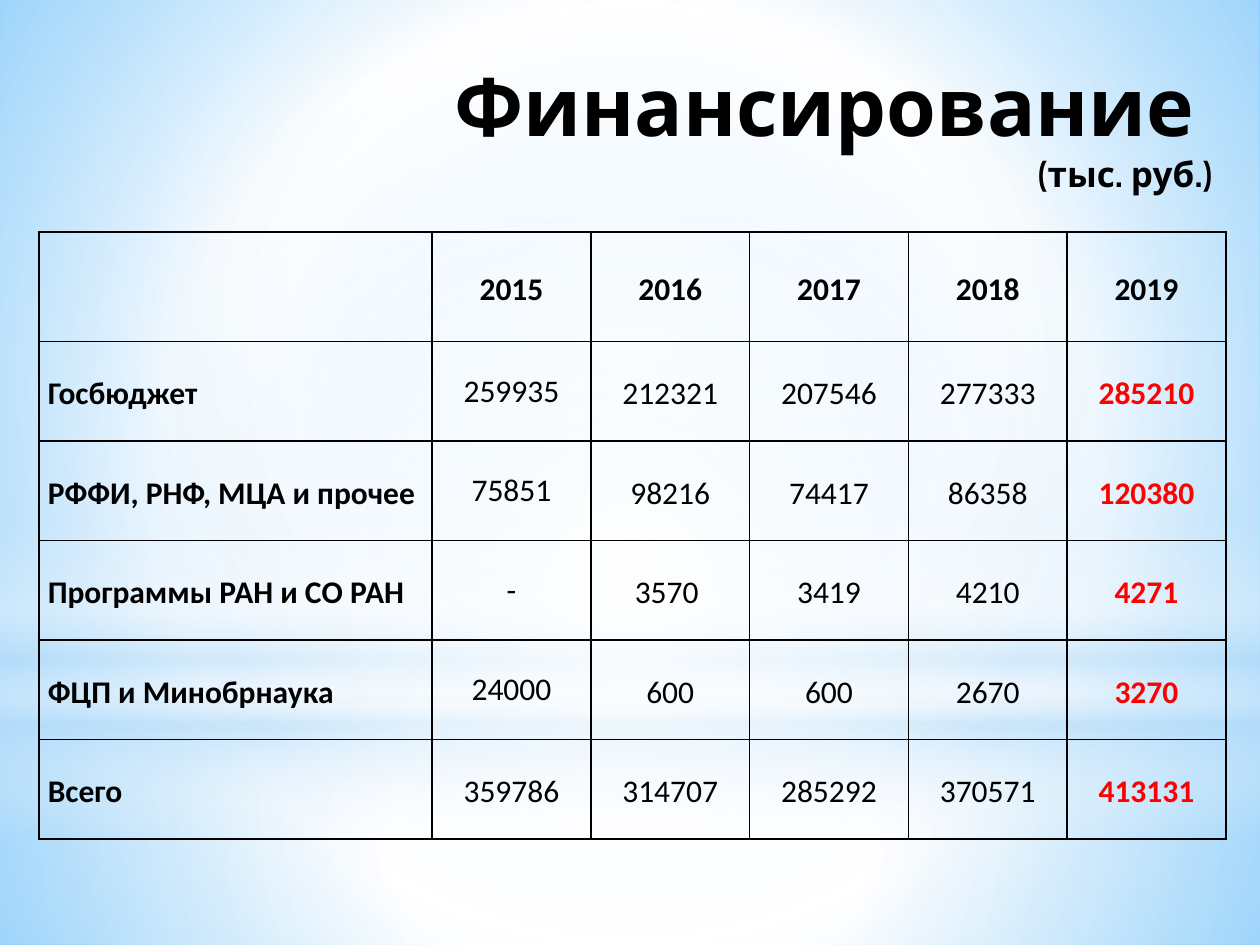
from dataclasses import dataclass
from typing import Any, Optional

import lxml.etree
import pptx
import pptx.dml.color
import pptx.enum.shapes
import pptx.enum.text
import pptx.oxml.ns
import pptx.util

Inches = pptx.util.Inches
qn = pptx.oxml.ns.qn
Align = pptx.enum.text.PP_ALIGN
Preset = pptx.enum.shapes.MSO_SHAPE
MIDDLE = pptx.enum.text.MSO_ANCHOR.MIDDLE


@dataclass(frozen=True)
class Theme:
    black: str = "000000"
    accent: str = "FF0000"
    white: str = "FFFFFF"
    haze: str = "B4DCFA"
    sky: str = "99D4FE"
    deep_sky: str = "54BDFF"
    title_font: str = "Cabin"
    table_font: str = "Calibri"
    title_size: int = 46
    unit_size: int = 20
    table_size: int = 18
    border_width: int = 1
    line_spacing: float = 1.15


@dataclass(frozen=True)
class Stop:
    position: int
    color: str
    opacity: int = 100


@dataclass(frozen=True)
class Glow:
    """A gradient layer; without an angle it spreads from the centre."""
    preset: Any
    top: float
    height: float
    stops: tuple[Stop, ...]
    angle: Optional[int] = None


THEME = Theme()
WHITE, HAZE = THEME.white, THEME.haze
SLIDE_WIDTH, SLIDE_HEIGHT = 10, 7.5
BACKGROUND = (Stop(0, THEME.sky), Stop(60, WHITE), Stop(100, THEME.deep_sky))
GLOWS = (
    Glow(Preset.RECTANGLE, 5.58, 1.92,
         (Stop(0, WHITE, 90), Stop(37, WHITE, 75), Stop(100, HAZE, 78))),
    Glow(Preset.RECTANGLE, 0, 5.58,
         (Stop(0, WHITE, 87), Stop(48, WHITE, 61), Stop(100, HAZE, 78))),
    Glow(Preset.RECTANGLE, 4.12, 2.5,
         (Stop(0, WHITE, 0), Stop(29, WHITE, 29), Stop(45, HAZE, 40),
          Stop(55, WHITE, 25), Stop(65, HAZE, 60), Stop(100, WHITE, 0)), 90),
    Glow(Preset.OVAL, 1.75, 5.58,
         (Stop(0, WHITE), Stop(56, WHITE, 0), Stop(100, WHITE, 0))),
)
COLUMN_WIDTHS = [3.12] + [1.26] * 5
ROW_HEIGHTS = [0.87] + [0.79] * 5
FUNDING = (
    ("", "2015", "2016", "2017", "2018", "2019"),
    ("Госбюджет", "259935", "212321", "207546", "277333", "285210"),
    ("РФФИ, РНФ, МЦА и прочее", "75851", "98216", "74417", "86358", "120380"),
    ("Программы РАН и СО РАН", "-", "3570 ", "3419", "4210", "4271"),
    ("ФЦП и Минобрнаука", "24000", "600", "600", "2670", "3270"),
    ("Всего", "359786", "314707", "285292", "370571", "413131"),
)


def set_attributes(target: Any, values: dict[str, Any]) -> None:
    for name, value in values.items():
        setattr(target, name, value)


def add_child(parent: Any, tag: str, **attributes: Any) -> Any:
    return lxml.etree.SubElement(
        parent, qn(tag), {name: str(value) for name, value in attributes.items()})


def apply_gradient(fill: Any, owner: Any, stops: tuple[Stop, ...],
                   angle: Optional[int] = None) -> None:
    """Give the fill found inside the owner element these stops."""
    fill.gradient()
    gradient = owner.find(f".//{qn('a:gradFill')}")
    for child in list(gradient):
        gradient.remove(child)
    stop_list = add_child(gradient, "a:gsLst")
    for stop in stops:
        entry = add_child(stop_list, "a:gs", pos=stop.position * 1000)
        color = add_child(entry, "a:srgbClr", val=stop.color)
        if stop.opacity < 100:
            add_child(color, "a:alpha", val=stop.opacity * 1000)
    if angle is None:
        spread = add_child(gradient, "a:path", path="circle")
        add_child(spread, "a:fillToRect", l=50000, t=50000, r=50000, b=50000)
    else:
        add_child(gradient, "a:lin", ang=angle * 60000, scaled=0)


def add_glow(slide: Any, glow: Glow) -> None:
    shape = slide.shapes.add_shape(glow.preset, 0, Inches(glow.top),
                                   Inches(SLIDE_WIDTH), Inches(glow.height))
    shape.shadow.inherit = False
    shape.line.fill.background()
    apply_gradient(shape.fill, shape.element.spPr, glow.stops, glow.angle)


def add_run(paragraph: Any, text: str, font: str, size: int,
            color: str = THEME.black, bold: bool = True) -> None:
    run = paragraph.add_run()
    run.text = text
    set_attributes(run.font, {"name": font, "size": pptx.util.Pt(size), "bold": bold})
    run.font.color.rgb = pptx.dml.color.RGBColor.from_string(color)


def add_title(slide: Any) -> None:
    box = slide.shapes.add_textbox(Inches(1.53), Inches(0.33), Inches(8.19), Inches(1.33))
    set_attributes(box.text_frame, {"word_wrap": True, "vertical_anchor": MIDDLE})
    paragraph = box.text_frame.paragraphs[0]
    paragraph.alignment = Align.RIGHT
    add_run(paragraph, "Финансирование ", THEME.title_font, THEME.title_size)
    paragraph.add_line_break()
    add_run(paragraph, "(тыс. руб.)", THEME.title_font, THEME.unit_size)


def add_borders(cell: Any) -> None:
    properties = cell._tc.get_or_add_tcPr()
    for side in ("L", "R", "T", "B"):
        line = add_child(properties, f"a:ln{side}", w=pptx.util.Pt(THEME.border_width))
        add_child(add_child(line, "a:solidFill"), "a:srgbClr", val=THEME.black)


def format_cell(cell: Any, text: str, row: int, column: int) -> None:
    add_borders(cell)
    cell.fill.background()
    set_attributes(cell, {
        "vertical_anchor": MIDDLE,
        "margin_left": Inches(0.07), "margin_right": Inches(0.07),
        "margin_top": 0, "margin_bottom": 0,
    })
    if not text:
        return
    last_row, last_column = len(ROW_HEIGHTS) - 1, len(COLUMN_WIDTHS) - 1
    single_spaced = column == 1 and 0 < row < last_row
    highlighted = column == last_column and row > 0
    paragraph = cell.text_frame.paragraphs[0]
    set_attributes(paragraph, {
        "alignment": Align.CENTER if column else Align.LEFT,
        "line_spacing": 1.0 if single_spaced else THEME.line_spacing,
    })
    add_run(paragraph, text, THEME.table_font, THEME.table_size,
            THEME.accent if highlighted else THEME.black,
            row == 0 or column in (0, last_column))


def add_funding_table(slide: Any) -> None:
    table = slide.shapes.add_table(
        len(ROW_HEIGHTS), len(COLUMN_WIDTHS), Inches(0.31), Inches(1.84),
        Inches(sum(COLUMN_WIDTHS)), Inches(sum(ROW_HEIGHTS))).table
    set_attributes(table, {"first_row": False, "horz_banding": False})
    for column, width in zip(table.columns, COLUMN_WIDTHS):
        column.width = Inches(width)
    for row, height in zip(table.rows, ROW_HEIGHTS):
        row.height = Inches(height)
    for row_index, texts in enumerate(FUNDING):
        for column_index, text in enumerate(texts):
            format_cell(table.cell(row_index, column_index), text, row_index, column_index)


def main() -> None:
    presentation = pptx.Presentation()
    set_attributes(presentation, {"slide_width": Inches(SLIDE_WIDTH),
                                  "slide_height": Inches(SLIDE_HEIGHT)})
    slide = presentation.slides.add_slide(presentation.slide_layouts[6])
    apply_gradient(slide.background.fill, slide.element, BACKGROUND)
    for glow in GLOWS:
        add_glow(slide, glow)
    add_title(slide)
    add_funding_table(slide)
    presentation.save("out.pptx")


if __name__ == "__main__":
    main()
